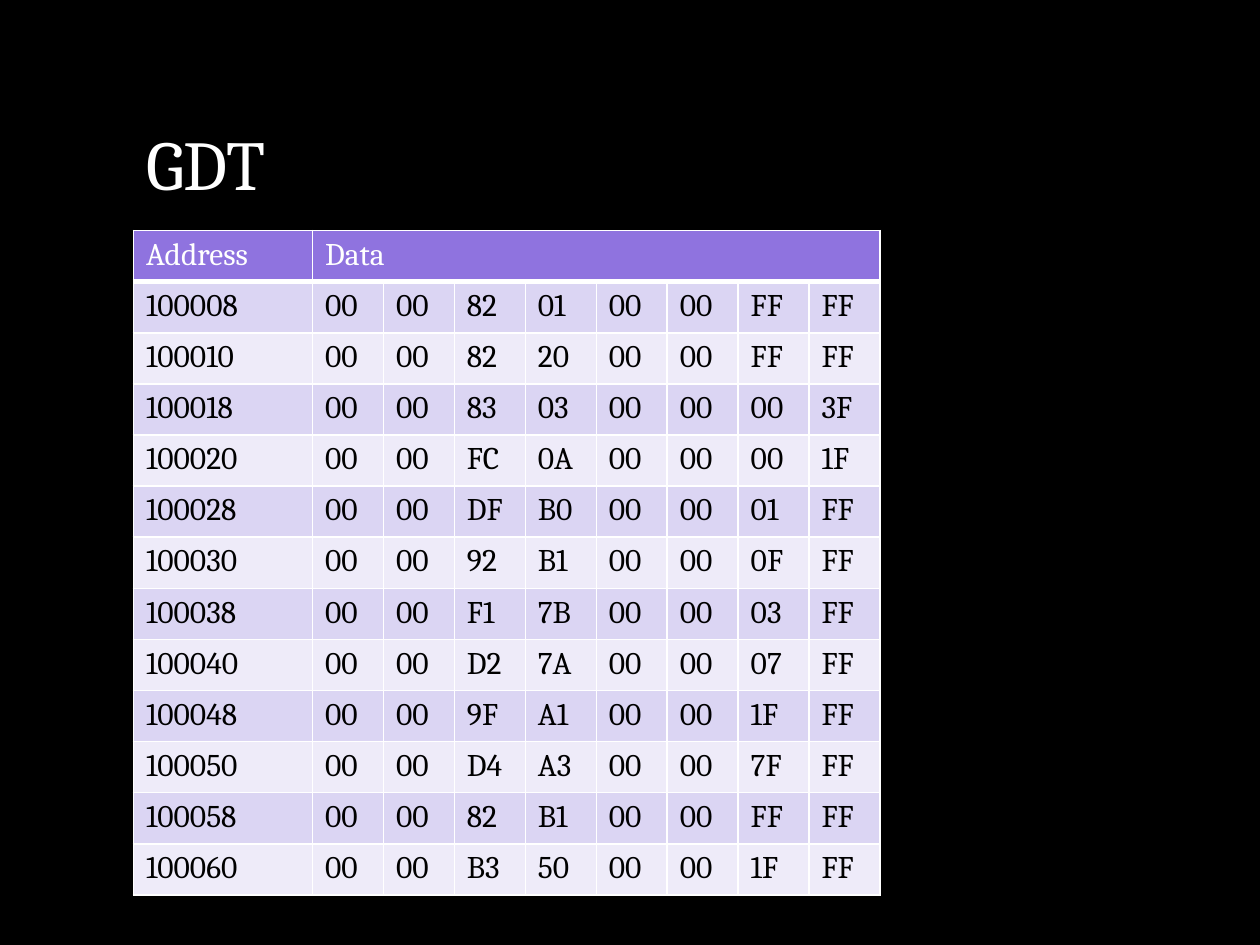
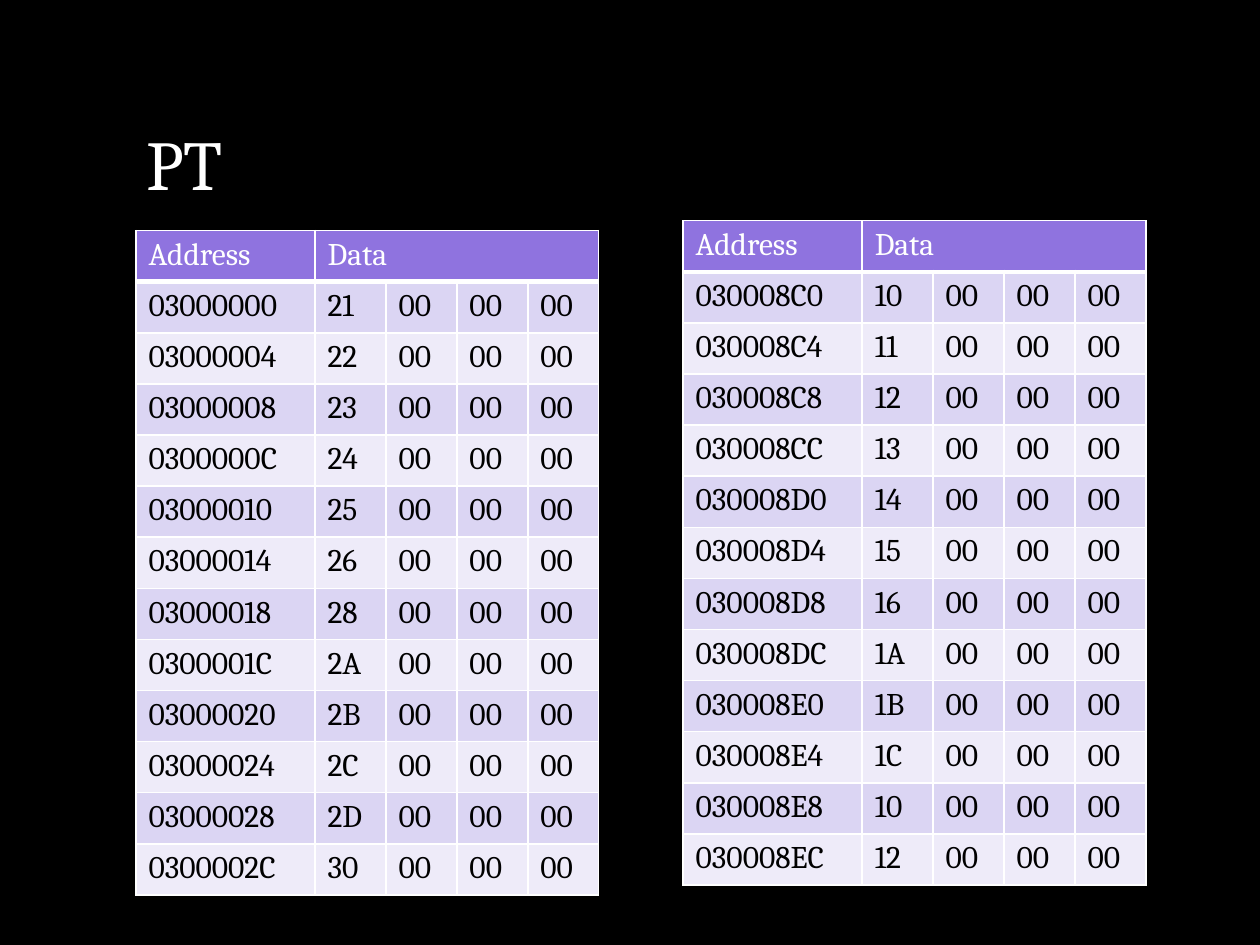
"""Build two slides of memory dumps: the GDT and the PT."""
from lxml import etree
from pptx import Presentation, util as u
from pptx.dml.color import RGBColor
from pptx.enum import text
from pptx.oxml.ns import qn

FONT = "Cambria"
BLACK, WHITE = "000000", "FFFFFF"
HEADER, BANDS = "8F73DF", ("EEEBF9", "DBD5F3")
ADDRESS_WIDTH, BYTE_WIDTH, ROW_HEIGHT = 3.61, 1.43, 1.03

GDT_ROWS = [
    "00 00 82 01 00 00 FF FF", "00 00 82 20 00 00 FF FF",
    "00 00 83 03 00 00 00 3F", "00 00 FC 0A 00 00 00 1F",
    "00 00 DF B0 00 00 01 FF", "00 00 92 B1 00 00 0F FF",
    "00 00 F1 7B 00 00 03 FF", "00 00 D2 7A 00 00 07 FF",
    "00 00 9F A1 00 00 1F FF", "00 00 D4 A3 00 00 7F FF",
    "00 00 82 B1 00 00 FF FF", "00 00 B3 50 00 00 1F FF",
]
PT_LOW = [f"{byte} 00 00 00" for byte in "21 22 23 24 25 26 28 2A 2B 2C 2D 30".split()]
PT_HIGH = [f"{byte} 00 00 00" for byte in "10 11 12 13 14 15 16 1A 1B 1C 10 12".split()]

SLIDES = [
    ("GDT", [(2.69, 4.65, 0x100008, 6, GDT_ROWS)]),
    ("PT", [(2.74, 4.65, 0x03000000, 8, PT_LOW),
            (13.77, 4.45, 0x030008C0, 8, PT_HIGH)]),
]


def color(value):
    """Turn a hex string into a colour."""
    return RGBColor.from_string(value)


def add_run(para, words, size, ink):
    """Add one formatted run to a paragraph."""
    span = para.add_run()
    span.text = words
    span.font.name = FONT
    span.font.size = u.Pt(size)
    span.font.bold = False
    span.font.color.rgb = color(ink)


deck = Presentation()
deck.slide_width, deck.slide_height = u.Cm(25.4), u.Cm(19.05)
backdrop = deck.slide_master.background.fill
backdrop.solid()
backdrop.fore_color.rgb = color(BLACK)

for heading, dumps in SLIDES:
    page = deck.slides.add_slide(deck.slide_layouts[5])
    title = page.shapes.title
    title.left, title.top = u.Cm(2.69), u.Cm(1.07)
    title.width, title.height = u.Cm(20.02), u.Cm(3.17)
    title.text_frame.auto_size = text.MSO_AUTO_SIZE.NONE
    title.text_frame.vertical_anchor = text.MSO_ANCHOR.BOTTOM
    para = title.text_frame.paragraphs[0]
    para.alignment = text.PP_ALIGN.LEFT
    para.line_spacing = 0.8
    add_run(para, heading, 40, WHITE)

    for left, top, start, digits, lines in dumps:
        data = [line.split() for line in lines]
        size = len(data[0])
        rows = [["Address", "Data"] + [""] * (size - 1)]
        rows += [[f"{start + size * index:0{digits}X}"] + row
                 for index, row in enumerate(data)]
        frame = page.shapes.add_table(
            len(rows), size + 1, u.Cm(left), u.Cm(top),
            u.Cm(ADDRESS_WIDTH + size * BYTE_WIDTH), u.Cm(ROW_HEIGHT * len(rows)))
        table = frame.table
        for index, column in enumerate(table.columns):
            column.width = u.Cm(BYTE_WIDTH if index else ADDRESS_WIDTH)
        table.cell(0, 1).merge(table.cell(0, size))

        for row_index, row in enumerate(rows):
            table.rows[row_index].height = u.Cm(ROW_HEIGHT)
            for column_index, words in enumerate(row):
                cell = table.cell(row_index, column_index)
                properties = cell._tc.get_or_add_tcPr()
                for side in "LRTB":
                    weight = 3 if row_index == 0 and side == "B" else 1
                    border = etree.SubElement(properties, qn(f"a:ln{side}"), w=str(u.Pt(weight)))
                    paint = etree.SubElement(border, qn("a:solidFill"))
                    etree.SubElement(paint, qn("a:srgbClr"), val=WHITE)
                cell.fill.solid()
                cell.fill.fore_color.rgb = color(BANDS[row_index % 2] if row_index else HEADER)
                if words:
                    add_run(cell.text_frame.paragraphs[0], words, 18,
                            BLACK if row_index else WHITE)

deck.save("out.pptx")
